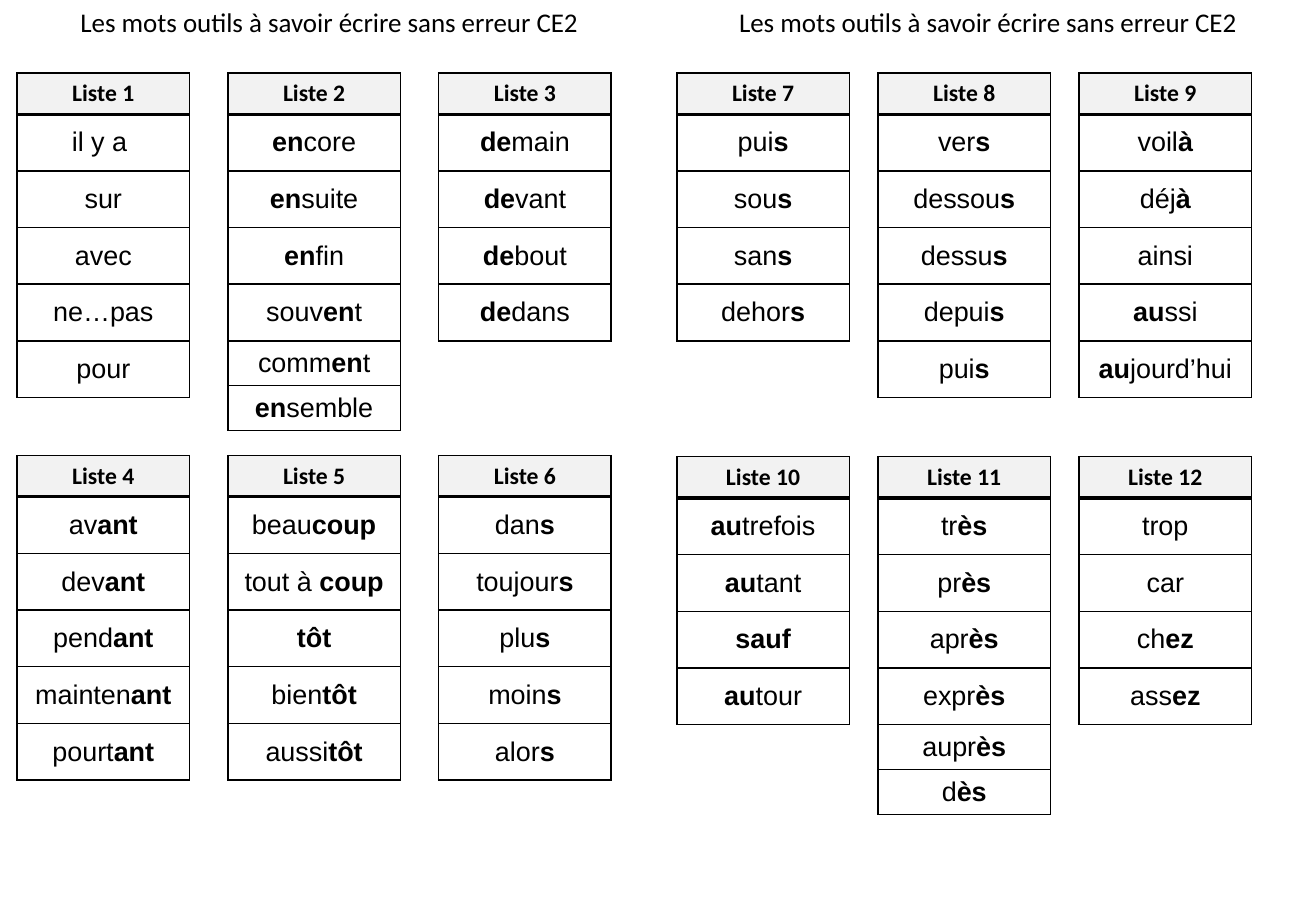
from lxml.etree import SubElement
from pptx import Presentation
from pptx.dml.color import RGBColor
from pptx.enum.text import MSO_ANCHOR as Anchor, MSO_AUTO_SIZE as AutoSize, PP_ALIGN as Align
from pptx.oxml.ns import qn
from pptx.util import Inches, Pt

BLACK, WHITE, GREY = "000000", "FFFFFF", "F2F2F2"
TITLE = "Les mots outils à savoir écrire sans erreur CE2"
TITLE_FONT = {"name": "Calibri", "size": Pt(16), "bold": False}
HEADER_FONT = {"name": "Calibri", "size": Pt(14), "bold": True}
WORD_FONT = {"name": "Arial", "size": Pt(16)}
THIN, THICK = Pt(1), Pt(2.25)

PAGE_W = Inches(5.42)
LIST_W = Inches(1.42)
HEADER_H, SHORT_H = Inches(0.34), Inches(0.37)
WORD_H = Inches(1.4) // 3
FULL_ROWS = 4  # in a list of six words, the last two rows are short

# For each page: left of the first and last columns, tops of the two rows, lists.
# Letters between asterisks are bold.
PAGES = [
    (0.14, 3.61, (0.6, 3.75), [
        ["il y a ", "sur", "avec", "ne…pas", "pour"],
        ["*en*core", "*en*suite", "*en*fin", "souv*en*t", "comm*en*t", "*en*semble"],
        ["*de*main", "*de*vant", "*de*bout", "*de*dans"],
        ["av*ant*", "dev*ant*", "pend*ant*", "mainten*ant*", "pourt*ant*"],
        ["beau*coup*", "tout à *coup*", "*tôt*", "bien*tôt*", "aussi*tôt*"],
        ["dan*s*", "toujour*s*", "plu*s*", "moin*s*", "alor*s*"],
    ]),
    (5.57, 8.88, (0.6, 3.76), [
        ["pui*s*", "sou*s*", "san*s*", "dehor*s*"],
        ["ver*s*", "dessou*s*", "dessu*s*", "depui*s*", "pui*s*"],
        ["voil*à*", "déj*à*", "ainsi", "*au*ssi", "*au*jourd’hui"],
        ["*au*trefois", "*au*tant", "*sauf*", "*au*tour"],
        ["tr*ès*", "pr*ès*", "apr*ès*", "expr*ès*", "aupr*ès*", "d*ès*"],
        ["trop", "car", "ch*ez*", "ass*ez*"],
    ]),
]


def rgb(color):
    return RGBColor.from_string(color)


def add_run(p, text, **font):
    r = p.add_run()
    r.text = text
    for name, value in font.items():
        setattr(r.font, name, value)
    r.font.color.rgb = rgb(BLACK)


def add_title(slide, left):
    s = slide.shapes.add_textbox(left, 0, PAGE_W, Inches(0.37))
    tf = s.text_frame
    tf.word_wrap = True
    tf.auto_size = AutoSize.SHAPE_TO_FIT_TEXT
    p = tf.paragraphs[0]
    p.alignment = Align.CENTER
    add_run(p, TITLE, **TITLE_FONT)


def add_borders(cell, top, bottom):
    tc_pr = cell._tc.get_or_add_tcPr()
    for tag, width in (("lnL", THIN), ("lnR", THIN), ("lnT", top), ("lnB", bottom)):
        ln = SubElement(tc_pr, qn(f"a:{tag}"), w=str(int(width)))
        fill = SubElement(ln, qn("a:solidFill"))
        SubElement(fill, qn("a:srgbClr"), val=BLACK)


def format_cell(cell, color, top=THIN, bottom=THIN):
    """Style the cell and return its centred paragraph."""
    add_borders(cell, top, bottom)
    cell.fill.solid()
    cell.fill.fore_color.rgb = rgb(color)
    cell.vertical_anchor = Anchor.MIDDLE
    p = cell.text_frame.paragraphs[0]
    p.alignment = Align.CENTER
    return p


def add_word_list(slide, number, words, left, top):
    full = FULL_ROWS if len(words) == 6 else len(words)
    heights = [HEADER_H] + [WORD_H] * full + [SHORT_H] * (len(words) - full)
    s = slide.shapes.add_table(len(heights), 1, left, top, LIST_W, sum(heights))
    table = s.table
    table.first_row = table.horz_banding = False
    for row, height in zip(table.rows, heights):
        row.height = height

    p = format_cell(table.cell(0, 0), GREY, bottom=THICK)
    add_run(p, f"Liste {number}", **HEADER_FONT)
    for i, word in enumerate(words, 1):
        p = format_cell(table.cell(i, 0), WHITE, top=THICK if i == 1 else THIN)
        for j, part in enumerate(word.split("*")):
            if part:
                add_run(p, part, bold=j % 2 == 1, **WORD_FONT)


def main():
    prs = Presentation()
    prs.slide_width, prs.slide_height = Inches(10.83), Inches(7.5)
    slide = prs.slides.add_slide(prs.slide_layouts[6])
    number = 1
    for page, (first, last, tops, lists) in enumerate(PAGES):
        add_title(slide, page * PAGE_W)
        step = (last - first) / 2
        for i, words in enumerate(lists):
            row, col = divmod(i, 3)
            add_word_list(slide, number, words, Inches(first + col * step), Inches(tops[row]))
            number += 1
    prs.save("out.pptx")


if __name__ == "__main__":
    main()
